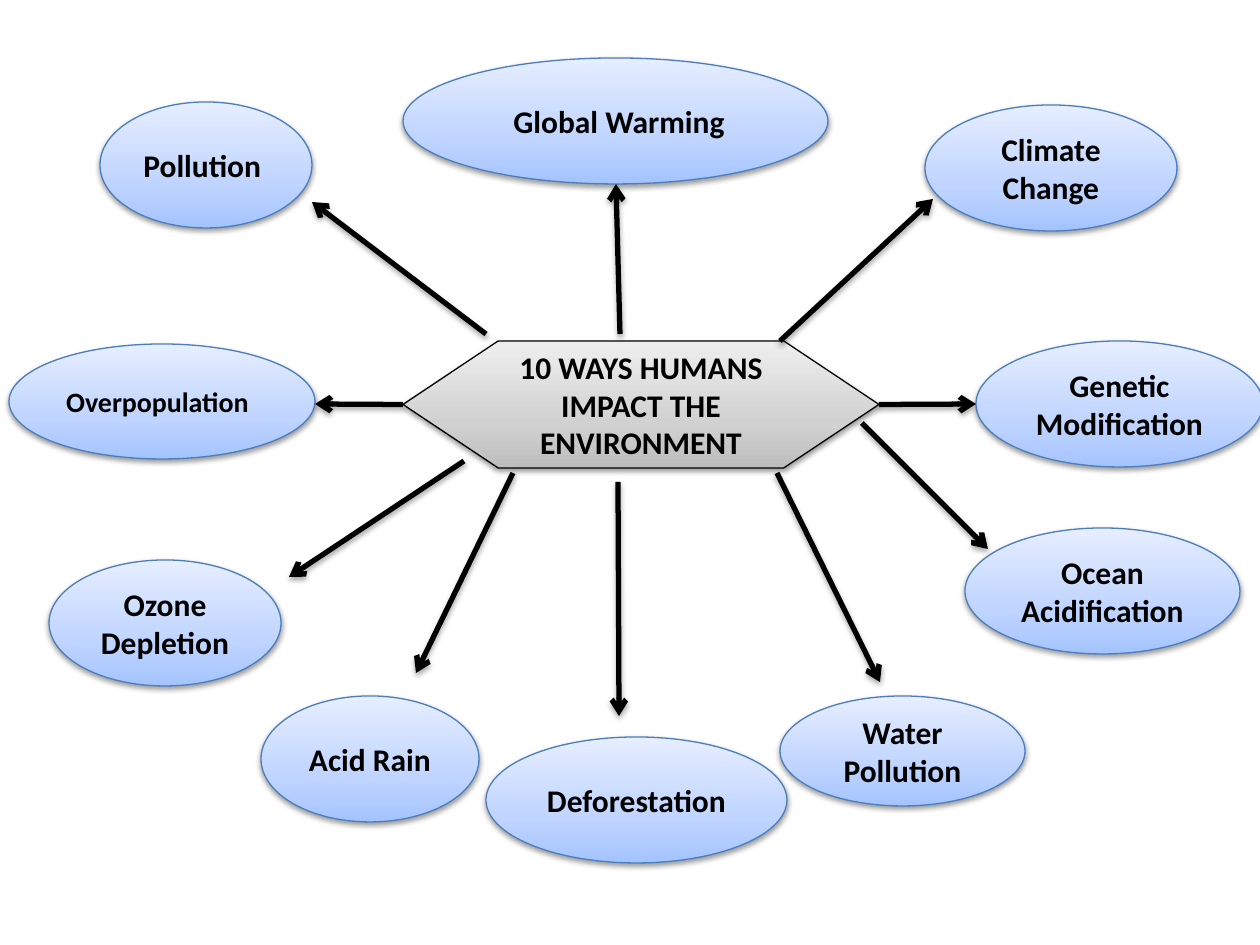
from copy import deepcopy

from lxml.etree import SubElement
from pptx import Presentation
from pptx.dml.color import RGBColor
from pptx.enum.shapes import MSO_CONNECTOR, MSO_SHAPE
from pptx.enum.text import MSO_ANCHOR, PP_ALIGN
from pptx.oxml.ns import qn
from pptx.util import Emu, Pt

BLACK = RGBColor(0x00, 0x00, 0x00)
EDGE = RGBColor(0x4B, 0x7E, 0xBC)
BLUES = (RGBColor(0xA4, 0xC4, 0xFF), RGBColor(0xBF, 0xD4, 0xFF), RGBColor(0xE6, 0xEE, 0xFF))
GRAYS = (RGBColor(0xBD, 0xBD, 0xBD), RGBColor(0xD1, 0xD1, 0xD1), RGBColor(0xEE, 0xEE, 0xEE))
STOPS = (0, 0.35, 1)
LEFT, MID = PP_ALIGN.LEFT, PP_ALIGN.CENTER

TOPICS = [
    ("Overpopulation", (9, 344, 306, 115), 16, LEFT),
    ("Pollution", (100, 102, 212, 126), 18, LEFT),
    ("Climate Change", (925, 105, 252, 126), 18, MID),
    ("Genetic Modification", (976, 341, 287, 126), 18, MID),
    ("Acid Rain", (261, 696, 218, 126), 18, MID),
    ("Deforestation", (486, 737, 301, 126), 18, MID),
    ("Water Pollution", (780, 696, 245, 110), 18, MID),
    ("Ocean Acidification", (965, 528, 275, 126), 18, MID),
    (" Global Warming", (403, 58, 425, 126), 18, MID),
    ("Ozone Depletion", (49, 560, 232, 126), 18, MID),
]
RAYS = [
    ((620, 334), (616, 184)),
    ((780, 341), (933, 199)),
    ((486, 334), (312, 202)),
    ((464, 461), (289, 577)),
    ((618, 482), (619, 716)),
    ((777, 473), (880, 682)),
    ((513, 473), (416, 673)),
    ((862, 423), (988, 549)),
]


def px(n):
    """Turn pixels into EMU."""
    return Emu(round(n * 914400 / 126))


class Board:
    """Style and current slide of the mind map."""

    font = "Calibri"

    def __init__(self, deck):
        """Add a blank slide to the deck."""
        self.slide = deck.slides.add_slide(deck.slide_layouts[6])

    def shade(self, props, alpha, dist):
        """Put a soft drop shadow on shape properties."""
        box = props.find(qn("a:effectLst"))
        if box is None:
            box = SubElement(props, qn("a:effectLst"))
        drop = SubElement(box, qn("a:outerShdw"), blurRad="40000", dist=str(dist),
                          dir="5400000", rotWithShape="0")
        tint = SubElement(drop, qn("a:srgbClr"), val=str(BLACK))
        SubElement(tint, qn("a:alpha"), val=str(alpha * 1000))

    def blend(self, shape, tones):
        """Fill a shape with a three-stop upward gradient."""
        shape.fill.gradient()
        shape.fill.gradient_angle = 90
        first = shape._element.spPr.find(".//" + qn("a:gs"))
        first.addnext(deepcopy(first))
        for stop, place, tone in zip(shape.fill.gradient_stops, STOPS, tones):
            stop.position = place
            stop.color.rgb = tone

    def node(self, kind, text, rect, tones, edge, size=18, align=MID):
        """Draw a labelled gradient shape."""
        shape = self.slide.shapes.add_shape(kind, *map(px, rect))
        self.blend(shape, tones)
        shape.line.color.rgb = edge
        shape.line.width = Pt(0.75)
        shape.shadow.inherit = False
        self.shade(shape._element.spPr, 38, 20000)
        frame = shape.text_frame
        frame.word_wrap = True
        frame.vertical_anchor = MSO_ANCHOR.MIDDLE
        frame.text = text
        par = frame.paragraphs[0]
        par.alignment = align
        font = par.runs[0].font
        font.name, font.size, font.bold = self.font, Pt(size), True
        font.color.rgb = BLACK
        return shape

    def arrow(self, start, end):
        """Draw a thick arrow between two points."""
        link = self.slide.shapes.add_connector(
            MSO_CONNECTOR.STRAIGHT, *map(px, start + end))
        link.line.color.rgb = BLACK
        link.line.width = Pt(3)
        SubElement(link.line._get_or_add_ln(), qn("a:tailEnd"), type="arrow")
        self.shade(link._element.spPr, 35, 23000)
        return link


def main():
    """Build and save the mind map."""
    deck = Presentation()
    deck.slide_width, deck.slide_height = px(1260), px(945)
    board = Board(deck)
    for text, rect, size, align in TOPICS:
        board.node(MSO_SHAPE.OVAL, text, rect, BLUES, EDGE, size, align)
    hub = board.node(MSO_SHAPE.FLOWCHART_PREPARATION,
                     "10 WAYS HUMANS IMPACT THE ENVIRONMENT",
                     (403, 341, 476, 127), GRAYS, BLACK)
    for start, end in RAYS:
        board.arrow(start, end)
    board.arrow((879, 404), (976, 404)).begin_connect(hub, 3)
    board.arrow((403, 404), (315, 404)).begin_connect(hub, 1)
    deck.save("out.pptx")


if __name__ == "__main__":
    main()
